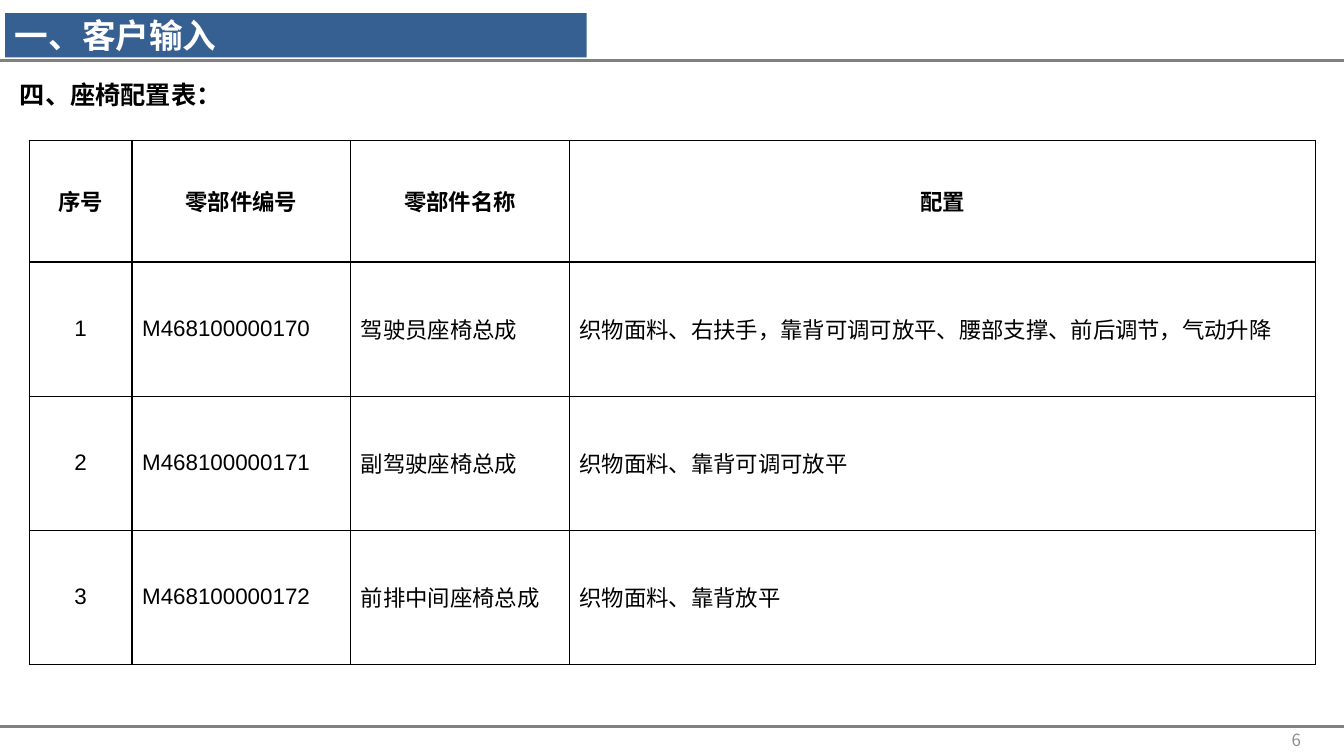
import pptx
import pptx.dml.color
import pptx.enum.shapes
import pptx.enum.text
import pptx.oxml.ns
import pptx.util
from lxml import etree

WIDTH, HEIGHT = 13.33, 7.5
COLORS = {"banner": "376092", "rule": "808080", "number": "8C8C8C",
          "text": "000000", "border": "000000", "white": "FFFFFF"}
CJK, LATIN = "Noto Sans CJK SC", "Arial"
LEFT = pptx.enum.text.PP_ALIGN.LEFT
CENTER = pptx.enum.text.PP_ALIGN.CENTER
RIGHT = pptx.enum.text.PP_ALIGN.RIGHT
MIDDLE = pptx.enum.text.MSO_ANCHOR.MIDDLE

COLUMN_WIDTHS = [1.02, 2.17, 2.17, 7.4]
ROW_HEIGHTS = [1.21, 1.33, 1.33, 1.33]
SEATS = [
    ("序号", "零部件编号", "零部件名称", "配置"),
    ("1", "M468100000170", "驾驶员座椅总成",
     "织物面料、右扶手，靠背可调可放平、腰部支撑、前后调节，气动升降"),
    ("2", "M468100000171", "副驾驶座椅总成", "织物面料、靠背可调可放平"),
    ("3", "M468100000172", "前排中间座椅总成", "织物面料、靠背放平"),
]


def inches(*lengths):
    return [pptx.util.Inches(length) for length in lengths]


def rgb(name):
    return pptx.dml.color.RGBColor.from_string(COLORS[name])


def add_run(paragraph, text, size, color="text", name=CJK, bold=False):
    run = paragraph.add_run()
    run.text = text
    font_format = {"size": pptx.util.Pt(size), "bold": bold, "name": name}
    for attribute, value in font_format.items():
        setattr(run.font, attribute, value)
    run.font.color.rgb = rgb(color)
    # East Asian typeface
    east_asian = etree.SubElement(run.font._element, pptx.oxml.ns.qn("a:ea"))
    east_asian.set("typeface", CJK)


def add_rule(slide, y):
    rule = slide.shapes.add_connector(
        pptx.enum.shapes.MSO_CONNECTOR.STRAIGHT, *inches(0, y, WIDTH, y))
    rule.line.color.rgb = rgb("rule")
    rule.line.width = pptx.util.Pt(2)
    etree.SubElement(rule._element.spPr, pptx.oxml.ns.qn("a:effectLst"))


def add_banner(slide, box, title):
    banner = slide.shapes.add_shape(
        pptx.enum.shapes.MSO_SHAPE.RECTANGLE, *inches(*box))
    banner.shadow.inherit = False
    banner.fill.solid()
    banner.fill.fore_color.rgb = rgb("banner")
    banner.line.fill.background()
    frame = banner.text_frame
    frame.word_wrap = False
    frame.vertical_anchor = MIDDLE
    frame.paragraphs[0].alignment = LEFT
    add_run(frame.paragraphs[0], title, 24, "white", bold=True)


def add_heading(slide, box):
    frame = slide.shapes.add_textbox(*inches(*box)).text_frame
    frame.word_wrap = True
    frame.auto_size = pptx.enum.text.MSO_AUTO_SIZE.SHAPE_TO_FIT_TEXT
    for text, name in (("四、座椅配置表", CJK), ("：", LATIN)):
        add_run(frame.paragraphs[0], text, 18, name=name, bold=True)


def add_page_number(slide, box, number):
    frame = slide.shapes.add_textbox(*inches(*box)).text_frame
    frame.word_wrap = True
    frame.vertical_anchor = MIDDLE
    frame.paragraphs[0].alignment = RIGHT
    add_run(frame.paragraphs[0], number, 12, "number")


def add_borders(cell):
    properties = cell._tc.get_or_add_tcPr()
    for side in ("a:lnL", "a:lnR", "a:lnT", "a:lnB"):
        border = etree.SubElement(properties, pptx.oxml.ns.qn(side),
                                  w=str(pptx.util.Pt(1)))
        fill = etree.SubElement(border, pptx.oxml.ns.qn("a:solidFill"))
        etree.SubElement(fill, pptx.oxml.ns.qn("a:srgbClr"), val=COLORS["border"])


def add_seat_table(slide, left, top):
    size = sum(COLUMN_WIDTHS), sum(ROW_HEIGHTS)
    table = slide.shapes.add_table(len(ROW_HEIGHTS), len(COLUMN_WIDTHS),
                                   *inches(left, top, *size)).table
    table.first_row = table.horz_banding = False
    for column, width in zip(table.columns, COLUMN_WIDTHS):
        column.width = pptx.util.Inches(width)
    for row, height in zip(table.rows, ROW_HEIGHTS):
        row.height = pptx.util.Inches(height)
    for r, seat in enumerate(SEATS):
        for c, text in enumerate(seat):
            cell = table.cell(r, c)
            add_borders(cell)
            cell.fill.background()
            cell.vertical_anchor = MIDDLE
            paragraph = cell.text_frame.paragraphs[0]
            paragraph.alignment = CENTER if r == 0 or c == 0 else LEFT
            add_run(paragraph, text, 16, name=LATIN, bold=r == 0)


def main():
    deck = pptx.Presentation()
    deck.slide_width, deck.slide_height = inches(WIDTH, HEIGHT)
    slide = deck.slides.add_slide(deck.slide_layouts[6])
    # Frame of the page
    for y in (0.6, 7.21):
        add_rule(slide, y)
    add_page_number(slide, (9.89, 7.14, 3.11, 0.4), "6")
    # Titles
    add_banner(slide, (0.05, 0.13, 5.77, 0.44), "一、客户输入")
    add_heading(slide, (0.1, 0.74, 2.83, 0.4))
    # Seat configuration
    add_seat_table(slide, 0.29, 1.39)
    deck.save("out.pptx")


if __name__ == "__main__":
    main()
